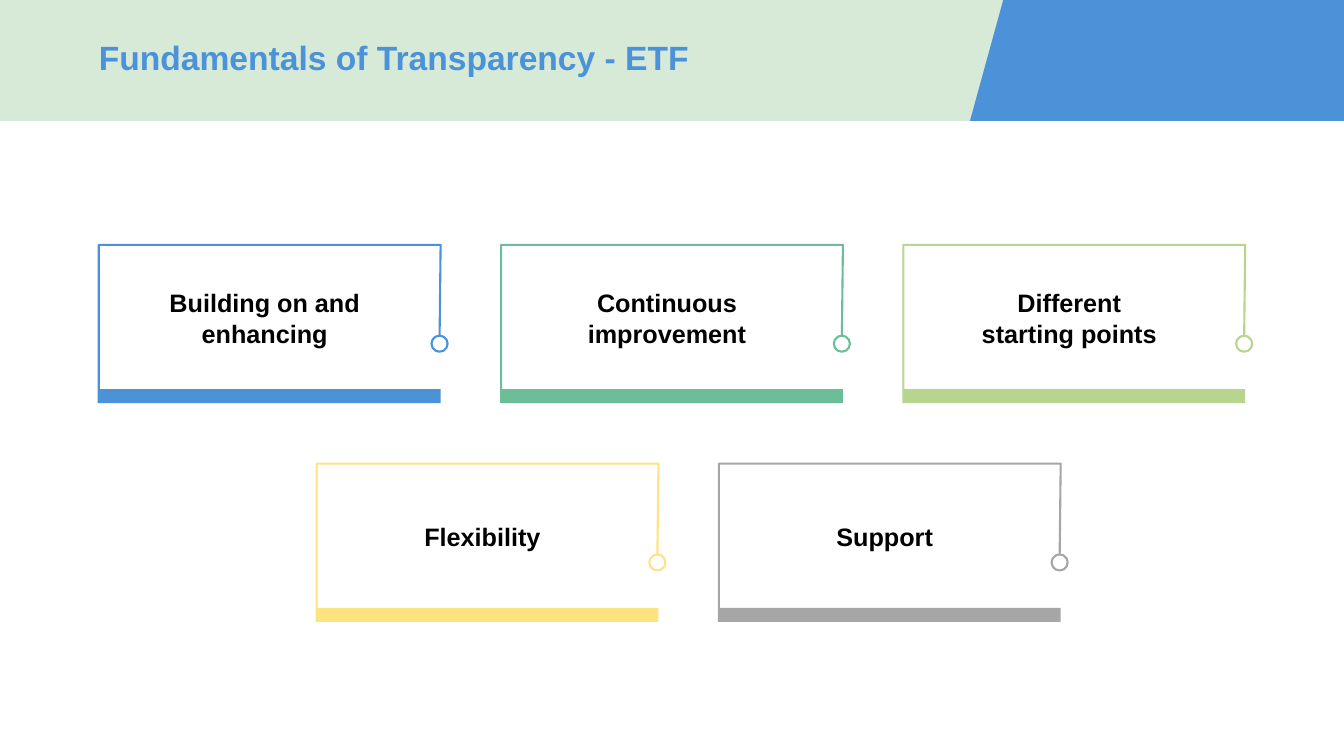
from pptx import Presentation
from pptx import util as u
from pptx.dml.color import RGBColor
from pptx.enum import shapes, text

BLUE, PALE_GREEN = "4B92D8", "D7EAD7"
CARD_WIDTH, CARD_HEIGHT, BAR_HEIGHT = 3.39, 1.57, 0.14
CARD_PITCH = 3.99
ROWS = [
    (0.98, 2.43, [("Building on and enhancing", BLUE),
                  ("Continuous improvement", "6CBE99"),
                  ("Different starting points", "B8D590")]),
    (3.14, 4.6, [("Flexibility", "FFE37E"),
                 ("Support", "A6A6A6")]),
]


def rgb(value):
    return RGBColor.from_string(value)


class SlideBuilder:
    font_name = "Arial"
    line_width = u.Pt(1.5)

    def __init__(self, slide):
        self.slide = slide

    def paint(self, shape, fill=None, line=None):
        shape.shadow.inherit = False
        if fill:
            shape.fill.solid()
            shape.fill.fore_color.rgb = rgb(fill)
        else:
            shape.fill.background()
        if line:
            shape.line.color.rgb = rgb(line)
            shape.line.width = self.line_width
        else:
            shape.line.fill.background()

    def preset(self, kind, left, top, width, height, fill=None, line=None):
        shape = self.slide.shapes.add_shape(
            kind, u.Inches(left), u.Inches(top), u.Inches(width), u.Inches(height))
        self.paint(shape, fill, line)

    def outline(self, points, closed=False, fill=None, line=None):
        corners = [(u.Inches(x), u.Inches(y)) for x, y in points]
        builder = self.slide.shapes.build_freeform(*corners[0])
        builder.add_line_segments(corners[1:], close=closed)
        self.paint(builder.convert_to_shape(), fill, line)

    def set_text(self, frame, wording, size, color, align, insets):
        """Fill a text frame with one bold paragraph; insets run left to bottom."""
        frame.word_wrap = True
        frame.auto_size = text.MSO_AUTO_SIZE.NONE
        frame.vertical_anchor = text.MSO_ANCHOR.MIDDLE
        (frame.margin_left, frame.margin_top,
         frame.margin_right, frame.margin_bottom) = map(u.Inches, insets)
        paragraph = frame.paragraphs[0]
        paragraph.text = wording
        paragraph.alignment = align
        font = paragraph.font
        font.name, font.size, font.bold = self.font_name, u.Pt(size), True
        font.color.rgb = rgb(color)
        return paragraph

    def header(self, wording):
        self.preset(shapes.MSO_SHAPE.RECTANGLE, 0, 0, 13.33, 1.2, fill=PALE_GREEN)
        self.outline([(9.62, 1.2), (9.95, 0), (13.33, 0), (13.33, 1.2)],
                     closed=True, fill=BLUE)
        title = self.slide.shapes.title
        title.left, title.top = u.Inches(0.98), u.Inches(0.29)
        title.width, title.height = u.Inches(7.85), u.Inches(0.61)
        paragraph = self.set_text(title.text_frame, wording, 24, BLUE,
                                  text.PP_ALIGN.LEFT, (0, 0, 0, 0))
        paragraph.line_spacing = 0.9
        # The title sits above the header band
        title.element.getparent().append(title.element)

    def card(self, left, top, wording, color):
        """Draw a label inside an open frame with a base bar and a ring."""
        right, bottom = left + CARD_WIDTH, top + CARD_HEIGHT
        label = self.slide.shapes.add_textbox(
            u.Inches(left + 0.62), u.Inches(top + 0.42), u.Inches(2.15), u.Inches(0.66))
        self.set_text(label.text_frame, wording, 18, "000000",
                      text.PP_ALIGN.CENTER, (0.05, 0, 0.15, 0.05))
        self.outline([(left, bottom), (left, top), (right, top),
                      (right - 0.01, top + 0.91)], line=color)
        self.preset(shapes.MSO_SHAPE.RECTANGLE, left, bottom - BAR_HEIGHT,
                    CARD_WIDTH, BAR_HEIGHT, fill=color)
        self.preset(shapes.MSO_SHAPE.OVAL, right - 0.09, top + 0.9,
                    0.16, 0.16, line=color)


def main():
    deck = Presentation()
    deck.slide_width, deck.slide_height = u.Inches(13.33), u.Inches(7.5)
    builder = SlideBuilder(deck.slides.add_slide(deck.slide_layouts[5]))
    builder.header("Fundamentals of Transparency - ETF")
    for row_left, row_top, principles in ROWS:
        for column, (wording, color) in enumerate(principles):
            builder.card(row_left + column * CARD_PITCH, row_top, wording, color)
    deck.save("out.pptx")


if __name__ == "__main__":
    main()
